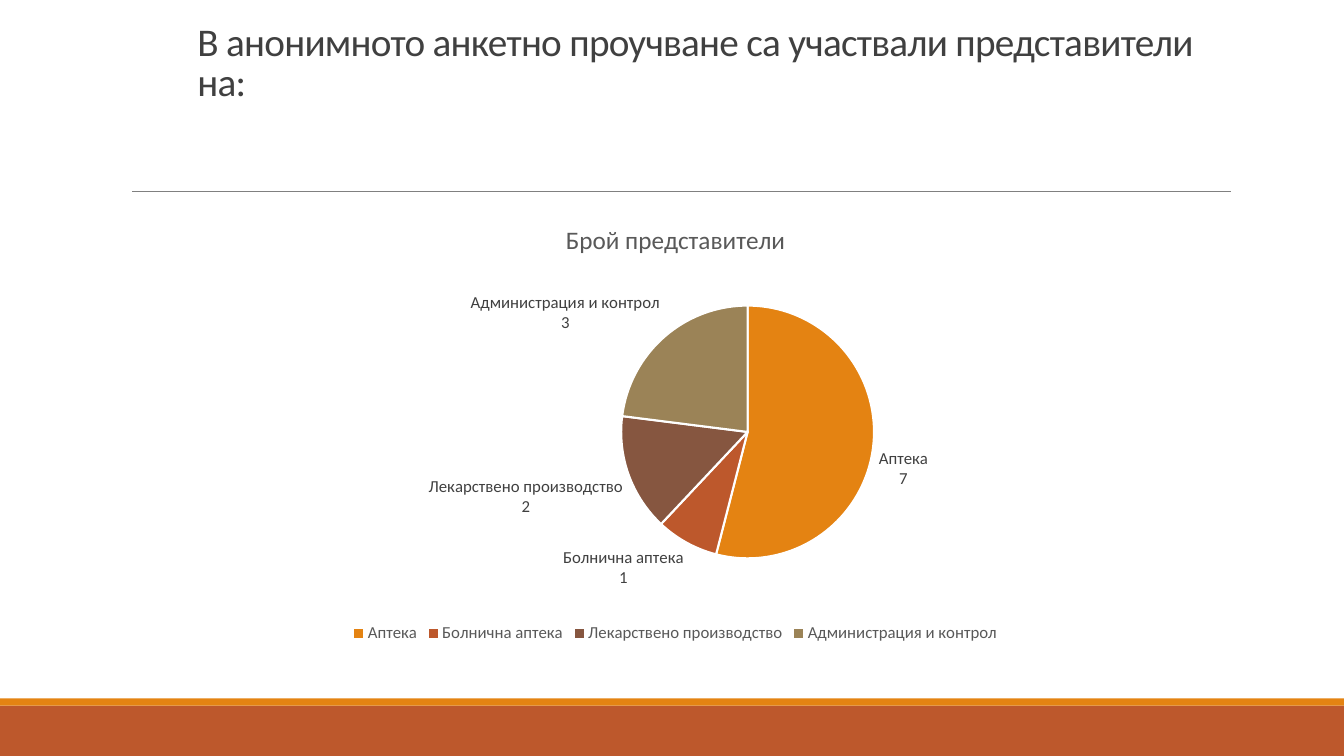
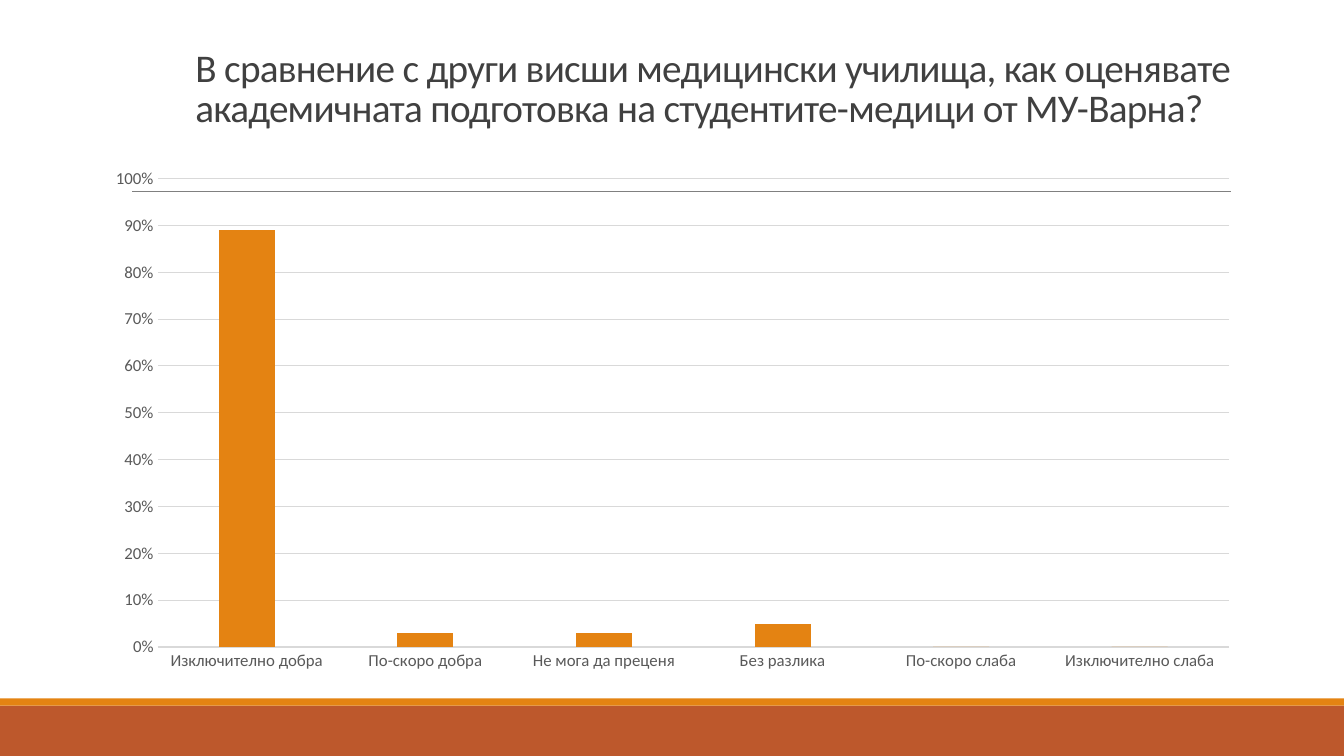
from lxml.etree import SubElement
from pptx import Presentation
from pptx.chart.data import CategoryChartData
from pptx.dml.color import RGBColor
from pptx.enum.chart import XL_CHART_TYPE, XL_LABEL_POSITION, XL_LEGEND_POSITION, XL_TICK_MARK
from pptx.enum.shapes import MSO_CONNECTOR, MSO_SHAPE
from pptx.enum.text import MSO_ANCHOR
from pptx.oxml.ns import qn
from pptx.util import Inches, Pt

ORANGE = RGBColor(0xE4, 0x83, 0x12)
RUST = RGBColor(0xBD, 0x58, 0x2C)
BROWN = RGBColor(0x86, 0x56, 0x40)
KHAKI = RGBColor(0x9B, 0x83, 0x57)
DARK = RGBColor(0x40, 0x40, 0x40)
TEXT = RGBColor(0x59, 0x59, 0x59)
RULE = RGBColor(0x80, 0x80, 0x80)
GRID = RGBColor(0xD9, 0xD9, 0xD9)
WHITE = RGBColor(0xFF, 0xFF, 0xFF)
FONT = "Calibri"


def style(font, size=12, color=TEXT):
    font.name, font.size, font.bold = FONT, Pt(size), False
    font.color.rgb = color


def write(frame, text, size=12, color=TEXT, space=None, track=None):
    frame.text = text
    for para in frame.paragraphs:
        if space:
            para.line_spacing = space
        for run in para.runs:
            style(run.font, size, color)
            if track:
                run.font._element.set("spc", str(track))


deck = Presentation()
deck.slide_width, deck.slide_height = Inches(13.33), Inches(7.5)

heads = [
    ("В анонимното анкетно проучване са участвали представители на:",
     (1.86, 0.21, 10.56, 0.88)),
    ("В сравнение с други висши медицински училища, как оценявате "
     "академичната подготовка на студентите-медици от МУ-Варна?",
     (1.84, 0.15, 10.58, 1.19)),
]
slides = []
for head, box in heads:
    slide = deck.slides.add_slide(deck.slide_layouts[6])
    for top, height, color in [(7, 0.5, RUST), (6.93, 0.07, ORANGE)]:
        band = slide.shapes.add_shape(
            MSO_SHAPE.RECTANGLE, 0, Inches(top), deck.slide_width, Inches(height))
        band.shadow.inherit = False
        band.fill.solid()
        band.fill.fore_color.rgb = color
        band.line.fill.background()
    rule = slide.shapes.add_connector(
        MSO_CONNECTOR.STRAIGHT, Inches(1.31), Inches(1.9), Inches(12.21), Inches(1.9))
    rule.line.color.rgb = RULE
    rule.line.width = Pt(0.5)
    SubElement(rule._element.spPr, qn("a:effectLst"))
    frame = slide.shapes.add_textbox(*map(Inches, box)).text_frame
    frame.word_wrap = True
    frame.vertical_anchor = MSO_ANCHOR.BOTTOM
    write(frame, head, size=28, color=DARK, space=0.85, track=-50)
    slides.append(slide)

groups = [
    ("Аптека", 54, 7, ORANGE),
    ("Болнична аптека", 8, 1, RUST),
    ("Лекарствено производство", 15, 2, BROWN),
    ("Администрация и контрол", 23, 3, KHAKI),
]
data = CategoryChartData()
data.categories = [name for name, *rest in groups]
data.add_series("Брой представители", [share for name, share, *rest in groups])
pie = slides[0].shapes.add_chart(
    XL_CHART_TYPE.PIE, Inches(1.2), Inches(2.02), Inches(11), Inches(4.4), data).chart
style(pie.font)
pie.has_title = True
write(pie.chart_title.text_frame, "Брой представители", size=18)
pie.chart_title.include_in_layout = False
pie.has_legend = True
pie.legend.position = XL_LEGEND_POSITION.BOTTOM
pie.legend.include_in_layout = False
style(pie.legend.font)
plot = pie.plots[0]
plot.vary_by_categories = True
plot.has_data_labels = True
labels = plot.data_labels
labels.show_category_name = labels.show_percentage = True
labels.show_value = False
labels.position = XL_LABEL_POSITION.OUTSIDE_END
style(labels.font, color=DARK)
for i, (name, share, count, color) in enumerate(groups):
    point = plot.series[0].points[i]
    point.format.fill.solid()
    point.format.fill.fore_color.rgb = color
    point.format.line.color.rgb = WHITE
    point.format.line.width = Pt(1.5)
    write(point.data_label.text_frame, f"{name}\n{count}", color=DARK)
    point.data_label.position = XL_LABEL_POSITION.OUTSIDE_END

area = plot._element.getparent()
layout = area.find(qn("c:layout"))
if layout is None:
    layout = SubElement(area, qn("c:layout"))
    area.insert(0, layout)
manual = SubElement(layout, qn("c:manualLayout"))
for tag, val in [("layoutTarget", "inner"), ("xMode", "edge"), ("yMode", "edge"),
                 ("x", 0.45), ("y", 0.23), ("w", 0.23), ("h", 0.57)]:
    SubElement(manual, qn(f"c:{tag}")).set("val", str(val))

votes = {
    "Изключително добра": 0.89,
    "По-скоро добра": 0.03,
    "Не мога да преценя": 0.03,
    "Без разлика": 0.05,
    "По-скоро слаба": 0,
    "Изключително слаба": 0,
}
data = CategoryChartData(number_format="0%")
data.categories = list(votes)
data.add_series("Оценка", list(votes.values()))
bars = slides[1].shapes.add_chart(
    XL_CHART_TYPE.COLUMN_CLUSTERED, Inches(0.92), Inches(1.57),
    Inches(11.5), Inches(5.19), data).chart
style(bars.font)
bars.has_title = bars.has_legend = False
plot = bars.plots[0]
plot.vary_by_categories = False
plot.gap_width, plot.overlap = 219, -27
fill = plot.series[0].format.fill
fill.solid()
fill.fore_color.rgb = ORANGE
cats, vals = bars.category_axis, bars.value_axis
for axis in (cats, vals):
    axis.major_tick_mark = axis.minor_tick_mark = XL_TICK_MARK.NONE
    style(axis.tick_labels.font)
vals.minimum_scale, vals.maximum_scale, vals.major_unit = 0, 1, 0.1
vals.tick_labels.number_format = "0%"
vals.tick_labels.number_format_is_linked = False
vals.format.line.fill.background()
vals.has_major_gridlines = True
for line in (cats.format.line, vals.major_gridlines.format.line):
    line.color.rgb = GRID
    line.width = Pt(0.75)

deck.save("out.pptx")
